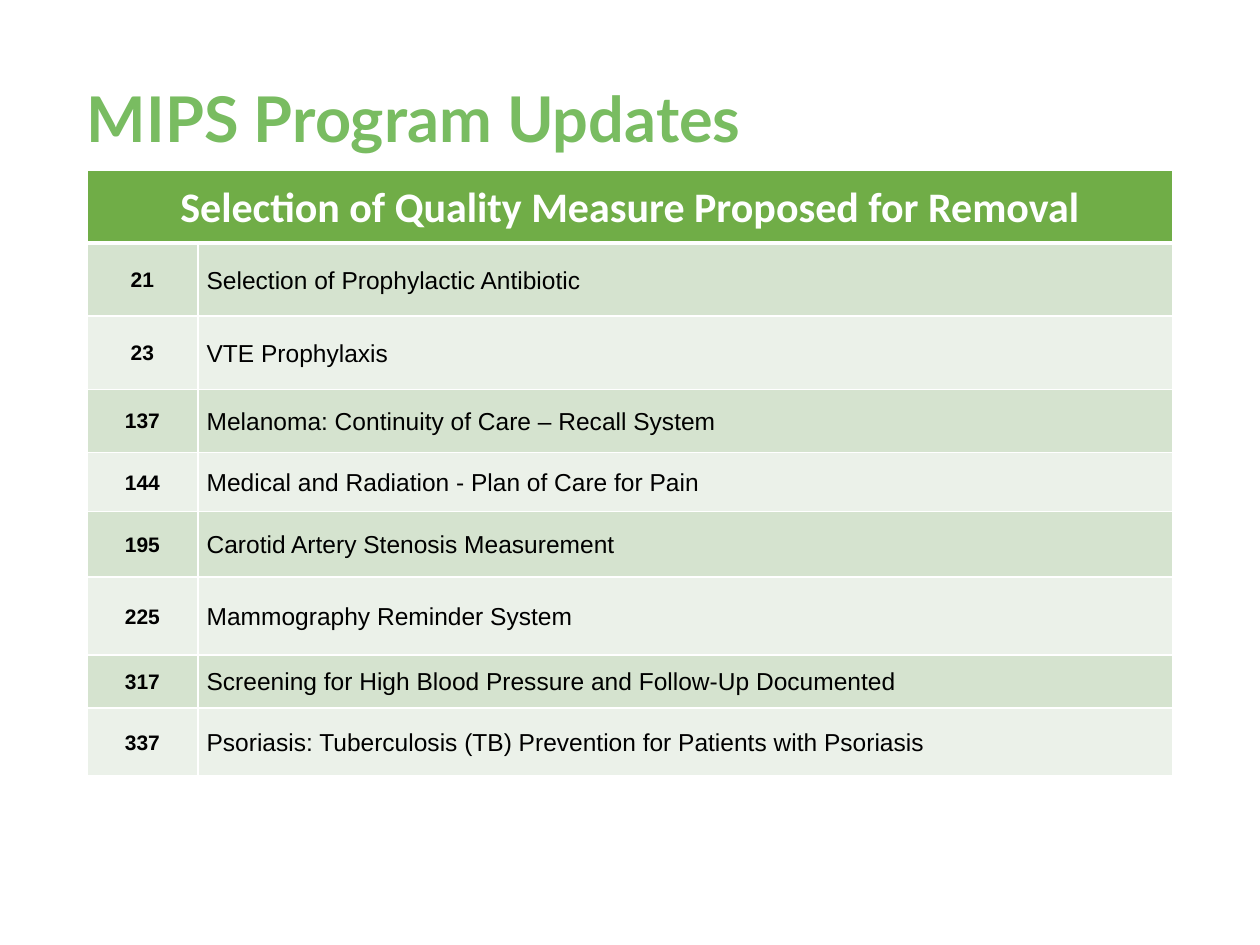
from lxml import etree
from pptx import Presentation
from pptx.dml.color import RGBColor
from pptx.enum.text import MSO_ANCHOR, PP_ALIGN
from pptx.oxml.ns import qn
from pptx.util import Inches, Pt

MIDDLE = MSO_ANCHOR.MIDDLE
LEFT, CENTER = PP_ALIGN.LEFT, PP_ALIGN.CENTER

TITLE_GREEN = RGBColor(0x79, 0xBC, 0x61)
HEADER_GREEN = RGBColor(0x70, 0xAD, 0x47)
BAND_DARK = RGBColor(0xD5, 0xE3, 0xCF)
BAND_LIGHT = RGBColor(0xEB, 0xF1, 0xE9)
WHITE = RGBColor(0xFF, 0xFF, 0xFF)
BLACK = RGBColor(0, 0, 0)

SLIDE_WIDTH, SLIDE_HEIGHT = 10, 7.5
MARGIN = 0.69
CONTENT_WIDTH = SLIDE_WIDTH - 2 * MARGIN
NUMBER_WIDTH = 0.88
HEADER_HEIGHT = 0.58

HEADING = "Selection of Quality Measure Proposed for Removal"
# Measure number, measure name, row height in inches
MEASURES = [
    ("21", "Selection of Prophylactic Antibiotic", 0.58),
    ("23", "VTE Prophylaxis", 0.58),
    ("137", "Melanoma: Continuity of Care – Recall System", 0.5),
    ("144", "Medical and Radiation - Plan of Care for Pain", 0.47),
    ("195", "Carotid Artery Stenosis Measurement", 0.52),
    ("225", "Mammography Reminder System", 0.62),
    ("317", "Screening for High Blood Pressure and Follow-Up Documented", 0.42),
    ("337", "Psoriasis: Tuberculosis (TB) Prevention for Patients with Psoriasis", 0.54),
]


def style_paragraph(paragraph, font_name, size, color, bold, align, spacing):
    paragraph.alignment = align
    paragraph.line_spacing = spacing
    font = paragraph.font
    font.name, font.size, font.bold = font_name, Pt(size), bold
    font.color.rgb = color


def set_borders(cell, top=1, bottom=1):
    """Draw white cell borders; the line elements come before the fill."""
    properties = cell._tc.get_or_add_tcPr()
    widths = {"a:lnL": 1, "a:lnR": 1, "a:lnT": top, "a:lnB": bottom}
    for position, (tag, width) in enumerate(widths.items()):
        line = etree.Element(qn(tag), w=str(Pt(width)))
        fill = etree.SubElement(line, qn("a:solidFill"))
        etree.SubElement(fill, qn("a:srgbClr"), val=str(WHITE))
        properties.insert(position, line)


def fill_cell(cell, text, fill, font_name, size, color, bold, align):
    cell.fill.solid()
    cell.fill.fore_color.rgb = fill
    cell.vertical_anchor = MIDDLE
    cell.margin_left = cell.margin_right = Inches(0.07)
    cell.margin_top = cell.margin_bottom = 0
    cell.text = text
    style_paragraph(cell.text_frame.paragraphs[0], font_name, size, color,
                    bold, align, 1.07)


def place_title(slide, left, top, width, height):
    title = slide.shapes.title
    title.left, title.top = Inches(left), Inches(top)
    title.width, title.height = Inches(width), Inches(height)
    frame = title.text_frame
    frame.text = "MIPS Program Updates"
    frame.vertical_anchor = MIDDLE
    frame.margin_left = frame.margin_right = 0
    frame.margin_top = frame.margin_bottom = 0
    style_paragraph(frame.paragraphs[0], "Lato", 36, TITLE_GREEN, True, LEFT, 0.9)


def place_measures(slide, left, top, width):
    heights = [HEADER_HEIGHT] + [height for _, _, height in MEASURES]
    table = slide.shapes.add_table(
        len(heights), 2, Inches(left), Inches(top),
        Inches(width), Inches(sum(heights))).table
    table.columns[0].width = Inches(NUMBER_WIDTH)
    table.columns[1].width = Inches(width - NUMBER_WIDTH)
    for row, height in zip(table.rows, heights):
        row.height = Inches(height)

    # Header across both columns
    header = table.cell(0, 0)
    header.merge(table.cell(0, 1))
    fill_cell(header, HEADING, HEADER_GREEN, "Calibri", 24, WHITE, True, CENTER)
    for column in range(2):
        set_borders(table.cell(0, column), bottom=3)

    # Banded measure rows
    for row, (number, measure, _) in enumerate(MEASURES, start=1):
        band = BAND_DARK if row % 2 else BAND_LIGHT
        number_cell, measure_cell = table.cell(row, 0), table.cell(row, 1)
        fill_cell(number_cell, number, band, "Arial", 12, BLACK, True, CENTER)
        fill_cell(measure_cell, measure, band, "Arial", 14, BLACK, False, LEFT)
        for cell in (number_cell, measure_cell):
            set_borders(cell, top=3 if row == 1 else 1)


def main():
    presentation = Presentation()
    presentation.slide_width = Inches(SLIDE_WIDTH)
    presentation.slide_height = Inches(SLIDE_HEIGHT)
    slide = presentation.slides.add_slide(presentation.slide_layouts[5])
    place_title(slide, MARGIN, 0.69, CONTENT_WIDTH, 0.56)
    place_measures(slide, MARGIN, 1.35, CONTENT_WIDTH)
    presentation.save("out.pptx")


if __name__ == "__main__":
    main()
